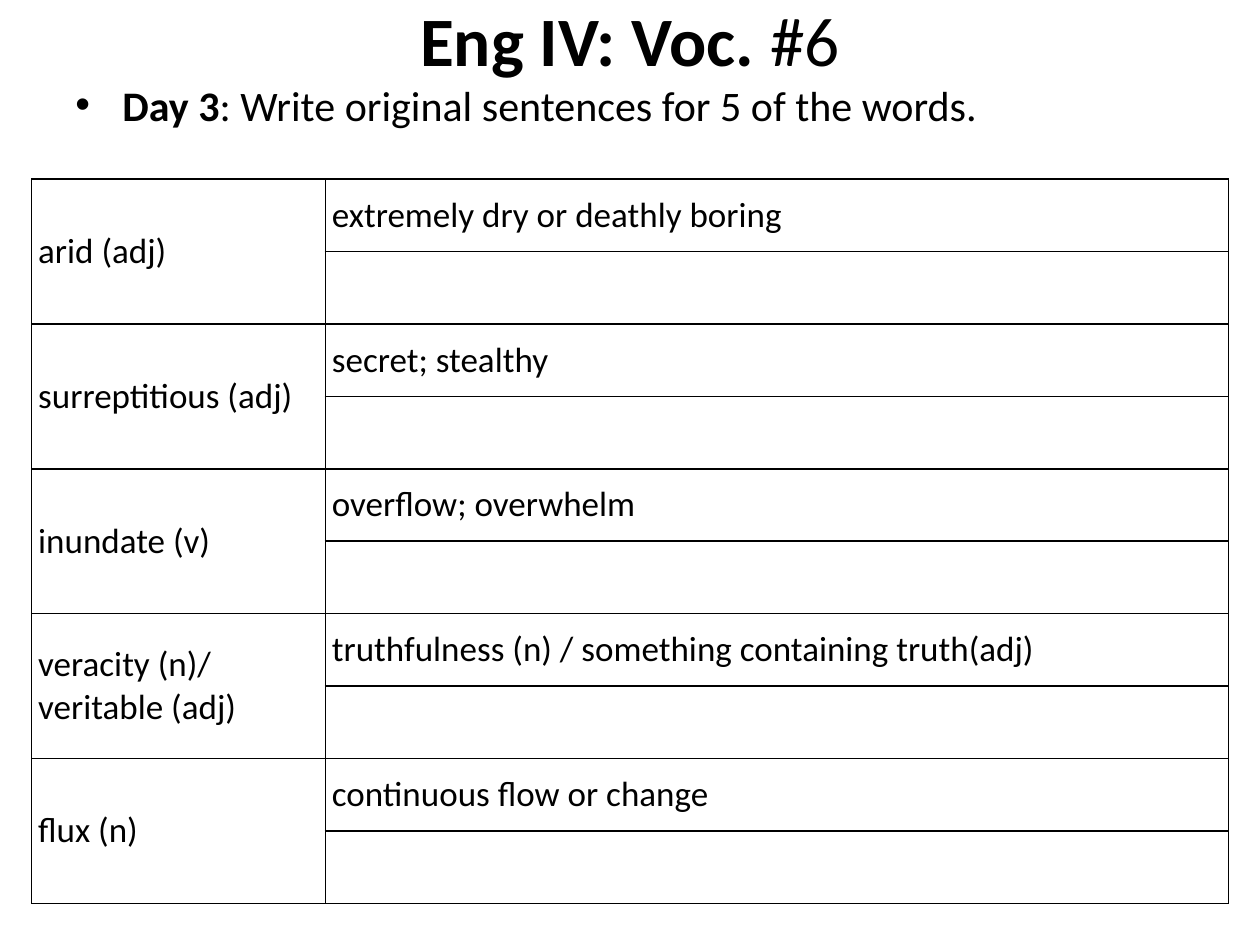
import pptx
import pptx.util
import pptx.dml.color
import pptx.enum.text
import lxml.etree
from pptx.oxml.ns import qn

Cm, Pt = pptx.util.Cm, pptx.util.Pt
MIDDLE = pptx.enum.text.MSO_ANCHOR.MIDDLE
BLACK = "000000"


def style(p, size, bolds=(False,)):
    for r, bold in zip(p.runs, bolds):
        r.font.name = "Calibri"
        r.font.size = Pt(size)
        r.font.bold = bold
        r.font.color.rgb = pptx.dml.color.RGBColor.from_string(BLACK)


def set_borders(cell, color, width):
    tc_pr = cell._tc.get_or_add_tcPr()
    for i, side in enumerate(("a:lnL", "a:lnR", "a:lnT", "a:lnB")):
        ln = lxml.etree.Element(qn(side), w=str(Pt(width)))
        fill = lxml.etree.SubElement(ln, qn("a:solidFill"))
        lxml.etree.SubElement(fill, qn("a:srgbClr"), val=color)
        tc_pr.insert(i, ln)


prs = pptx.Presentation()
prs.slide_width, prs.slide_height = Cm(25.4), Cm(19.05)
s = prs.slides.add_slide(prs.slide_layouts[5])

# Title
title = s.shapes.title
title.left, title.top, title.width, title.height = Cm(1.27), Cm(0), Cm(22.86), Cm(1.57)
tf = title.text_frame
tf.auto_size = pptx.enum.text.MSO_AUTO_SIZE.NONE
tf.vertical_anchor = MIDDLE
p = tf.paragraphs[0]
p.alignment = pptx.enum.text.PP_ALIGN.CENTER
for text in ("Eng IV: Voc. ", "#6"):
    p.add_run().text = text
style(p, 39.6, (True, False))

# Bulleted instruction
sp = s.shapes.add_textbox(Cm(1.27), Cm(1.47), Cm(22.86), Cm(1.27))
sp.text_frame.word_wrap = True
p = sp.text_frame.paragraphs[0]
for text in ("Day 3", ": Write original sentences for 5 of the words."):
    p.add_run().text = text
style(p, 24, (True, False))
p_pr = p._p.get_or_add_pPr()
p_pr.set("marL", str(Cm(0.95)))
p_pr.set("indent", str(-Cm(0.95)))
lxml.etree.SubElement(p_pr, qn("a:buFont"), typeface="Arial")
lxml.etree.SubElement(p_pr, qn("a:buChar"), char="•")

# Vocabulary table: each word spans a definition row and an empty writing row
words = [
    ("arid (adj)", "extremely dry or deathly boring"),
    ("surreptitious (adj)", "secret; stealthy"),
    ("inundate (v)", "overflow; overwhelm"),
    ("veracity (n)/\nveritable (adj)", "truthfulness (n) / something containing truth(adj)"),
    ("flux (n)", "continuous flow or change"),
]
table = s.shapes.add_table(2 * len(words), 2, Cm(0.64), Cm(3.61), Cm(24.13), Cm(14.6)).table
table.first_row = table.horz_banding = False
table.columns[0].width, table.columns[1].width = Cm(5.92), Cm(18.21)
for row in table.rows:
    row.height = Cm(1.46)

for i, (word, definition) in enumerate(words):
    table.cell(2 * i, 0).merge(table.cell(2 * i + 1, 0))
    table.cell(2 * i, 0).text_frame.text = word
    table.cell(2 * i, 1).text_frame.text = definition

for cell in table.iter_cells():
    cell.fill.background()
    cell.vertical_anchor = MIDDLE
    cell.margin_left = cell.margin_right = Cm(0.13)
    cell.margin_top = cell.margin_bottom = 0
    set_borders(cell, BLACK, 1)
    for p in cell.text_frame.paragraphs:
        style(p, 20)

prs.save("out.pptx")
